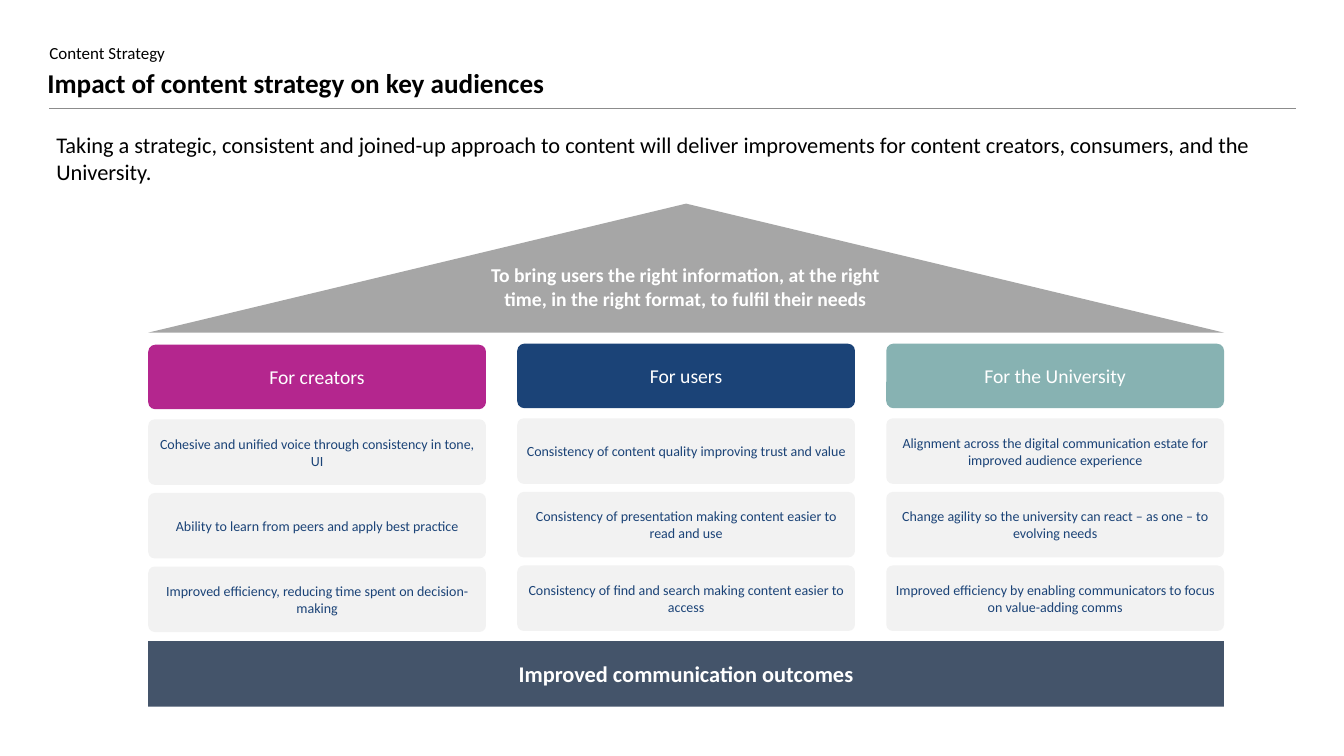
from pptx import Presentation
from pptx.dml.color import RGBColor
from pptx.enum import shapes, text
from pptx.util import Inches, Pt
from lxml import etree

BLACK = RGBColor(0x00, 0x00, 0x00)
WHITE = RGBColor(0xFF, 0xFF, 0xFF)
RULE_GREY = RGBColor(0x8C, 0x8C, 0x8C)
ROOF_GREY = RGBColor(0xA6, 0xA6, 0xA6)
CARD_GREY = RGBColor(0xF2, 0xF2, 0xF2)
MAGENTA = RGBColor(0xB4, 0x26, 0x8E)
NAVY = RGBColor(0x1B, 0x43, 0x77)
TEAL = RGBColor(0x87, 0xB2, 0xB2)
SLATE = RGBColor(0x44, 0x54, 0x6A)

SECTION = "Content Strategy"
TITLE = "Impact of content strategy on key audiences"
INTRO = ("Taking a strategic, consistent and joined-up approach to content will deliver "
         "improvements for content creators, consumers, and the University.")
GOAL = ("To bring users the right information, at the\u00a0right time, "
        "in the right format, to fulfil\u00a0their needs")
OUTCOME = "Improved communication outcomes"
AUDIENCES = [
    ("For creators", MAGENTA, 3.42, [
        "Cohesive and unified voice through consistency in tone, UI",
        "Ability to learn from peers and apply best practice",
        "Improved efficiency, reducing time spent on decision-making"]),
    ("For users", NAVY, 3.41, [
        "Consistency of content quality improving trust and value",
        "Consistency of presentation making content easier to read and use",
        "Consistency of find and search making content easier to access"]),
    ("For the University", TEAL, 3.41, [
        "Alignment across the digital communication estate for improved audience experience",
        "Change agility so the university can react – as one – to evolving needs",
        "Improved efficiency by enabling communicators to focus on value-adding comms"]),
]

LEFT, WIDTH = 1.47, 10.67
COL_W, COL_STEP = 3.35, 3.66
HEAD_H, CARD_H = 0.64, 0.65
CARD_OFFSET, CARD_STEP = 0.74, 0.73

SHAPE = shapes.MSO_SHAPE
LEFT_ALIGN, CENTER = text.PP_ALIGN.LEFT, text.PP_ALIGN.CENTER
TOP, MIDDLE = text.MSO_ANCHOR.TOP, text.MSO_ANCHOR.MIDDLE


def write(sp, words, size, color, bold=False, align=CENTER, anchor=MIDDLE,
          margins=(0.1, 0.05, 0.1, 0.05)):
    """Put one formatted paragraph into a shape."""
    tf = sp.text_frame
    tf.text = words
    tf.word_wrap = True
    tf.auto_size = text.MSO_AUTO_SIZE.NONE
    tf.vertical_anchor = anchor
    tf.margin_left, tf.margin_top, tf.margin_right, tf.margin_bottom = map(Inches, margins)
    p = tf.paragraphs[0]
    p.alignment = align
    font = p.runs[0].font
    font.name, font.size, font.bold = "Calibri", Pt(size), bold
    font.color.rgb = color


def add_block(s, kind, box, fill, radius=None):
    """Add a flat filled shape without an outline."""
    sp = s.shapes.add_shape(kind, *map(Inches, box))
    sp.shadow.inherit = False
    sp.fill.solid()
    sp.fill.fore_color.rgb = fill
    sp.line.fill.background()
    if radius is not None:
        sp.adjustments[0] = radius
    return sp


def add_text(s, box, words, size, color, **style):
    """Add a text box anchored at the top."""
    sp = s.shapes.add_textbox(*map(Inches, box))
    write(sp, words, size, color, anchor=TOP, **style)


def add_header(s):
    """Fill the title area and draw its rule."""
    add_text(s, (0.48, 0.41, 3.72, 0.21), SECTION, 12.1, BLACK,
             align=LEFT_ALIGN, margins=(0.01, 0.01, 0, 0))
    title = s.shapes.title
    title.left, title.top, title.width, title.height = map(Inches, (0.46, 0.64, 11.11, 0.34))
    write(title, TITLE, 19.4, BLACK, bold=True, align=LEFT_ALIGN, margins=(0.01, 0.02, 0, 0))
    rule = s.shapes.add_connector(shapes.MSO_CONNECTOR.STRAIGHT,
                                  *map(Inches, (0.49, 1.07, 12.85, 1.07)))
    rule.line.color.rgb = RULE_GREY
    rule.line.width = Pt(0.41)
    etree.SubElement(rule.line._get_or_add_ln().getparent(),
                     "{http://schemas.openxmlformats.org/drawingml/2006/main}effectLst")
    add_text(s, (0.46, 1.25, 12.18, 0.64), INTRO, 16, BLACK, align=LEFT_ALIGN)


def add_house(s):
    """Draw the roof, the three audience columns and the base."""
    add_block(s, SHAPE.ISOSCELES_TRIANGLE, (LEFT, 2.02, WIDTH, 1.28), ROOF_GREY)
    add_text(s, (4.7, 2.56, 4.2, 0.57), GOAL, 14, WHITE, bold=True)
    for col, (audience, color, top, benefits) in enumerate(AUDIENCES):
        x = LEFT + col * COL_STEP
        head = add_block(s, SHAPE.ROUNDED_RECTANGLE, (x, top, COL_W, HEAD_H), color, 0.11)
        write(head, audience, 14, WHITE)
        for row, benefit in enumerate(benefits):
            y = top + CARD_OFFSET + row * CARD_STEP
            card = add_block(s, SHAPE.ROUNDED_RECTANGLE, (x, y, COL_W, CARD_H), CARD_GREY, 0.1)
            write(card, benefit, 10, NAVY, margins=(0.04, 0.05, 0.04, 0.05))
    base = add_block(s, SHAPE.RECTANGLE, (LEFT, 6.36, WIDTH, 0.65), SLATE)
    write(base, OUTCOME, 16, WHITE, bold=True)


def main():
    """Build the slide and save it."""
    prs = Presentation()
    prs.slide_width, prs.slide_height = Inches(13.33), Inches(7.5)
    s = prs.slides.add_slide(prs.slide_layouts[5])
    add_header(s)
    add_house(s)
    prs.save("out.pptx")


if __name__ == "__main__":
    main()
